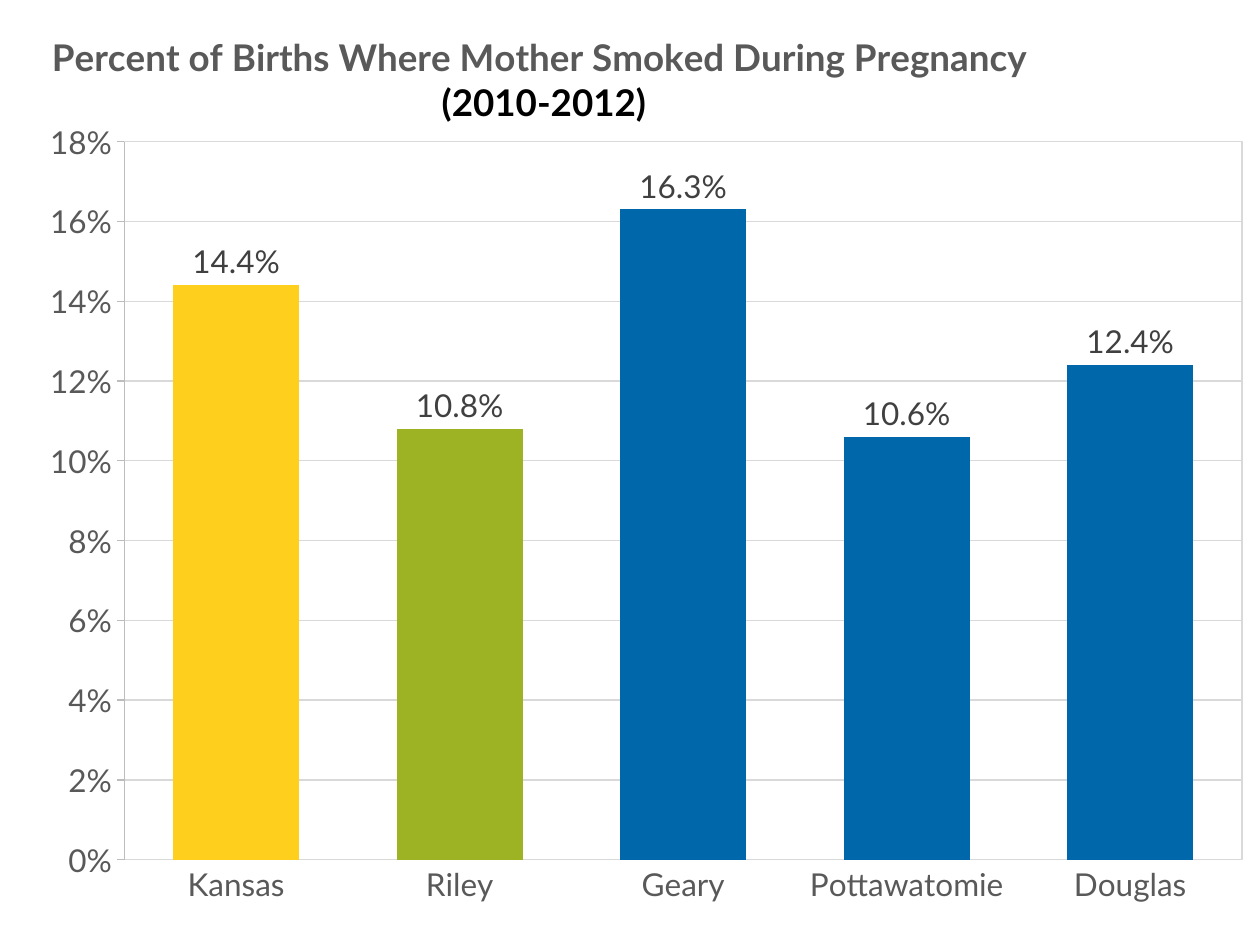
from lxml.etree import SubElement
from pptx import Presentation
from pptx.chart.data import CategoryChartData
from pptx.dml.color import RGBColor
from pptx.enum.chart import XL_CHART_TYPE, XL_LABEL_POSITION, XL_TICK_MARK
from pptx.enum.text import PP_ALIGN
from pptx.oxml import parse_xml
from pptx.oxml.ns import nsdecls, qn
from pptx.util import Inches, Pt

COLORS = {
    "state": "FFCF1D",
    "home": "9EB323",
    "county": "0067AA",
    "series": "066243",
    "axis_text": "595959",
    "label_text": "404040",
    "title_end": "000000",
    "grid": "D9D9D9",
    "value_line": "BDBDBD",
}
TITLE_LINES = [
    ("Percent of Births Where Mother Smoked During Pregnancy ", "axis_text"),
    ("(2010-2012)", "title_end"),
]
BIRTHS = [
    ("Kansas", 0.144, "state"),
    ("Riley", 0.108, "home"),
    ("Geary", 0.163, "county"),
    ("Pottawatomie", 0.106, "county"),
    ("Douglas", 0.124, "county"),
]
CHART_BOX = (0.08, 0, 10.08, 7.5)
TITLE_LAYOUT = {"xMode": "edge", "yMode": "edge", "x": 0.03, "y": 0.03}
PLOT_LAYOUT = {"layoutTarget": "inner", "xMode": "edge", "yMode": "edge",
               "x": 0.09, "y": 0.15, "w": 0.88, "h": 0.76}


def color(name):
    return RGBColor.from_string(COLORS[name])


def style_font(font, size, color_name, bold=False):
    font.name = "Lato"
    font.size = Pt(size)
    font.bold = bold
    font.color.rgb = color(color_name)


def style_line(line, color_name):
    line.width = Pt(0.75)
    line.color.rgb = color(color_name)


def set_layout(parent, position, values):
    layout = parent.find(qn("c:layout"))
    if layout is not None:
        parent.remove(layout)
    layout = parse_xml(f"<c:layout {nsdecls('c')}/>")
    manual = SubElement(layout, qn("c:manualLayout"))
    for tag, value in values.items():
        SubElement(manual, qn(f"c:{tag}")).set("val", str(value))
    parent.insert(position, layout)


def add_title(chart):
    chart.has_title = True
    frame = chart.chart_title.text_frame
    for index, (text, color_name) in enumerate(TITLE_LINES):
        paragraph = frame.add_paragraph() if index else frame.paragraphs[0]
        paragraph.alignment = PP_ALIGN.CENTER
        run = paragraph.add_run()
        run.text = text
        style_font(run.font, 21, color_name, bold=True)
    chart.chart_title.include_in_layout = False
    set_layout(chart.chart_title.element, 1, TITLE_LAYOUT)


def style_axes(chart):
    for axis, line_color, tick in (
        (chart.category_axis, "grid", XL_TICK_MARK.NONE),
        (chart.value_axis, "value_line", XL_TICK_MARK.OUTSIDE),
    ):
        style_font(axis.tick_labels.font, 18, "axis_text")
        style_line(axis.format.line, line_color)
        axis.major_tick_mark = tick
        axis.minor_tick_mark = XL_TICK_MARK.NONE
    value_axis = chart.value_axis
    value_axis.minimum_scale = 0
    value_axis.maximum_scale = 0.18
    value_axis.major_unit = 0.02
    value_axis.tick_labels.number_format = "0%"
    value_axis.tick_labels.number_format_is_linked = False
    style_line(value_axis.major_gridlines.format.line, "grid")


def style_bars(plot):
    plot.gap_width = 77
    plot.vary_by_categories = False
    series = plot.series[0]
    series.invert_if_negative = False
    series.format.fill.solid()
    series.format.fill.fore_color.rgb = color("series")
    for index, (_, _, color_name) in enumerate(BIRTHS):
        fill = series.points[index].format.fill
        fill.solid()
        fill.fore_color.rgb = color(color_name)
    labels = series.data_labels
    labels.show_value = True
    labels.number_format = "0.0%"
    labels.number_format_is_linked = False
    labels.position = XL_LABEL_POSITION.OUTSIDE_END
    style_font(labels.font, 18, "label_text")


def frame_plot(chart):
    plot_area = chart.element.find(".//" + qn("c:plotArea"))
    set_layout(plot_area, 0, PLOT_LAYOUT)
    plot_area.append(parse_xml(
        f"<c:spPr {nsdecls('c', 'a')}><a:noFill/><a:ln w=\"{Pt(0.75)}\"><a:solidFill>"
        f"<a:srgbClr val=\"{COLORS['grid']}\"/></a:solidFill></a:ln></c:spPr>"))


def main():
    presentation = Presentation()
    presentation.slide_width = Inches(10)
    presentation.slide_height = Inches(7.5)
    slide = presentation.slides.add_slide(presentation.slide_layouts[6])

    data = CategoryChartData()
    data.categories = [place for place, _, _ in BIRTHS]
    data.add_series("Series 1", [share for _, share, _ in BIRTHS])
    box = [Inches(length) for length in CHART_BOX]
    chart = slide.shapes.add_chart(XL_CHART_TYPE.COLUMN_CLUSTERED, *box, data).chart
    chart.has_legend = False
    chart.font.name = "Calibri"
    chart.font.size = Pt(10)

    add_title(chart)
    style_axes(chart)
    style_bars(chart.plots[0])
    frame_plot(chart)
    presentation.save("out.pptx")


if __name__ == "__main__":
    main()
